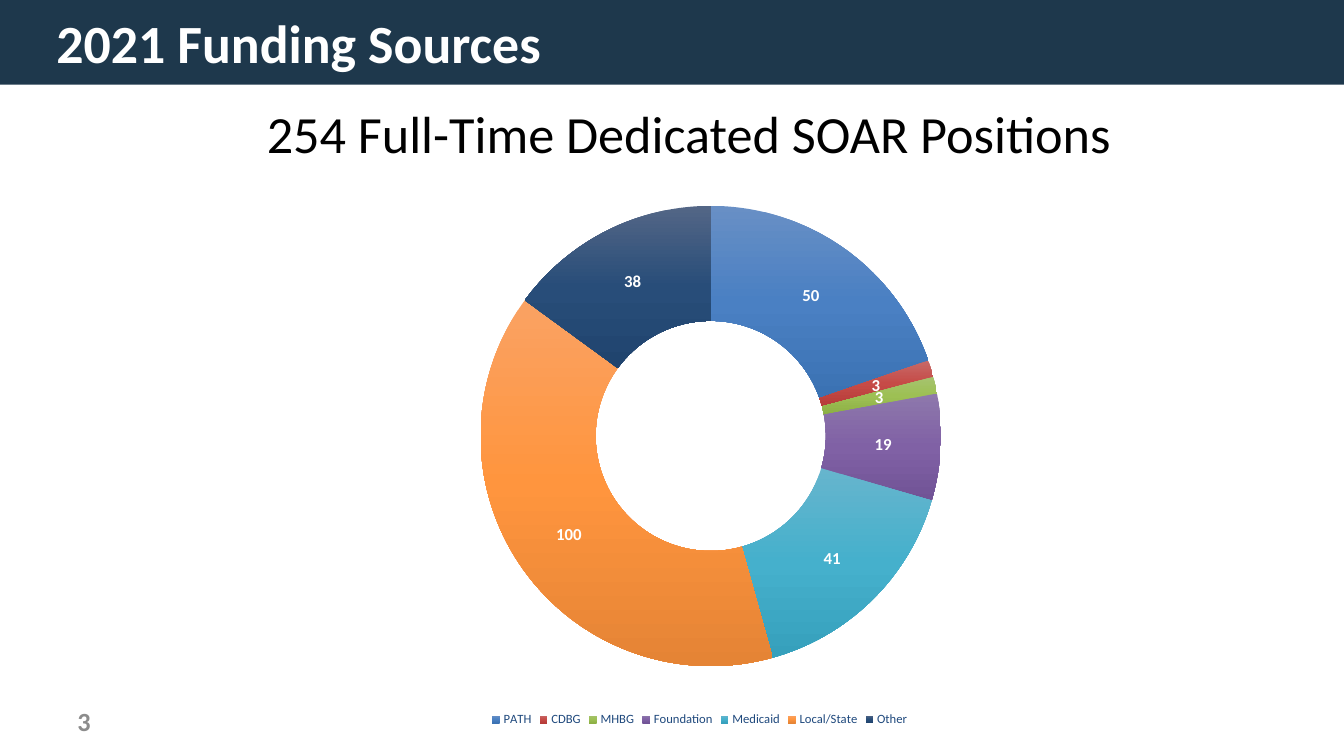
"""Build the 2021 funding sources slide with its doughnut chart."""
import copy

from pptx import Presentation, util as u
from pptx.chart.data import CategoryChartData
from pptx.dml.color import RGBColor
from pptx.enum import chart as charts, shapes, text
from pptx.oxml import parse_xml
from pptx.oxml.ns import nsdecls, qn

presentation = Presentation()
presentation.slide_width = u.Inches(13.33)
presentation.slide_height = u.Inches(7.5)
slide = presentation.slides.add_slide(presentation.slide_layouts[5])


def percent(left, top, width, height):
    """Turn shares of the slide, in percent, into lengths."""
    across, down = presentation.slide_width / 100, presentation.slide_height / 100
    return int(left * across), int(top * down), int(width * across), int(height * down)


def style(font, size, color, bold=False):
    """Set the face, size, colour and weight of a font."""
    font.name, font.size, font.bold = "Calibri", u.Pt(size), bold
    font.color.rgb = RGBColor.from_string(color)


title = slide.shapes.title
title.left, title.top, title.width, title.height = percent(3.45, 0.93, 91.5, 9.2)

band = slide.shapes.add_shape(shapes.MSO_SHAPE.RECTANGLE, *percent(0, 0, 100, 11.2))
band.shadow.inherit = False
band.fill.solid()
band.fill.fore_color.rgb = RGBColor.from_string("1E384C")
band.line.fill.background()
title.element.addprevious(band.element)

number = slide.shapes.add_textbox(*percent(5.03, 92.67, 22.5, 5.33))
subtitle = slide.shapes.add_textbox(*percent(10.35, 12.8, 81.85, 9.73))

left, center = text.PP_ALIGN.LEFT, text.PP_ALIGN.CENTER
top, middle = text.MSO_ANCHOR.TOP, text.MSO_ANCHOR.MIDDLE
fixed, grow = text.MSO_AUTO_SIZE.NONE, text.MSO_AUTO_SIZE.SHAPE_TO_FIT_TEXT
for shape, words, size, color, bold, align, anchor, fit in (
    (title, "2021 Funding Sources", 38.4, "FFFFFF", True, left, middle, fixed),
    (number, "3", 18.7, "8C8C8C", True, left, middle, fixed),
    (subtitle, "254 Full-Time Dedicated SOAR Positions", 37.3, "000000", False, center, top, grow),
):
    frame = shape.text_frame
    frame.word_wrap, frame.auto_size, frame.vertical_anchor = True, fit, anchor
    paragraph = frame.paragraphs[0]
    paragraph.alignment = align
    run = paragraph.add_run()
    run.text = words
    style(run.font, size, color, bold)

sources = (
    ("PATH", 50, ("688FC5", "4A80C3", "3B72B3")),
    ("CDBG", 3, ("C76967", "C64B47", "B63C39")),
    ("MHBG", 3, ("A6C36F", "9DC054", "8DB045")),
    ("Foundation", 19, ("8E78AC", "8061A5", "715396")),
    ("Medicaid", 41, ("66B5CD", "45B0CC", "36A0BC")),
    ("Local/State", 100, ("FAA263", "FF953E", "E58435")),
    ("Other", 38, ("536686", "284D79", "20446E")),
)
data = CategoryChartData()
data.categories = [name for name, value, colors in sources]
data.add_series("Series 1", [value for name, value, colors in sources])
chart = slide.shapes.add_chart(
    charts.XL_CHART_TYPE.DOUGHNUT, *percent(23.56, 24.53, 57, 72.13), data
).chart
chart.has_title = False
style(chart.font, 10, "000000")
chart.has_legend = True
chart.legend.position = charts.XL_LEGEND_POSITION.BOTTOM
chart.legend.include_in_layout = False
style(chart.legend.font, 9, "1F497D")

plot = chart.plots[0]
plot.vary_by_categories = True
plot.has_data_labels = True
labels = plot.data_labels
labels.show_value, labels.show_percentage = True, False
style(labels.font, 12, "FFFFFF", True)

for index, (name, value, colors) in enumerate(sources):
    slice_format = plot.series[0].points[index].format
    slice_format.line.fill.background()
    fill = slice_format.fill
    fill.gradient()
    fill.gradient_angle = 270
    stop_list = slice_format.element.find(".//" + qn("a:gsLst"))
    stop_list.append(copy.deepcopy(stop_list[-1]))
    for stop, position, color in zip(fill.gradient_stops, (0, 0.5, 1), colors):
        stop.position = position
        stop.color.rgb = RGBColor.from_string(color)

chart.element.find(".//" + qn("c:holeSize")).set("val", "75")
plot_area = chart.element.find(".//" + qn("c:plotArea"))
for layout in plot_area.findall(qn("c:layout")):
    plot_area.remove(layout)
settings = (("layoutTarget", "inner"), ("xMode", "edge"), ("yMode", "edge"),
            ("x", 0.214), ("y", 0.024), ("w", 0.601), ("h", 0.871))
entries = "".join(f'<c:{tag} val="{value}"/>' for tag, value in settings)
plot_area.insert(0, parse_xml(
    f'<c:layout {nsdecls("c")}><c:manualLayout>{entries}</c:manualLayout></c:layout>'
))

presentation.save("out.pptx")
